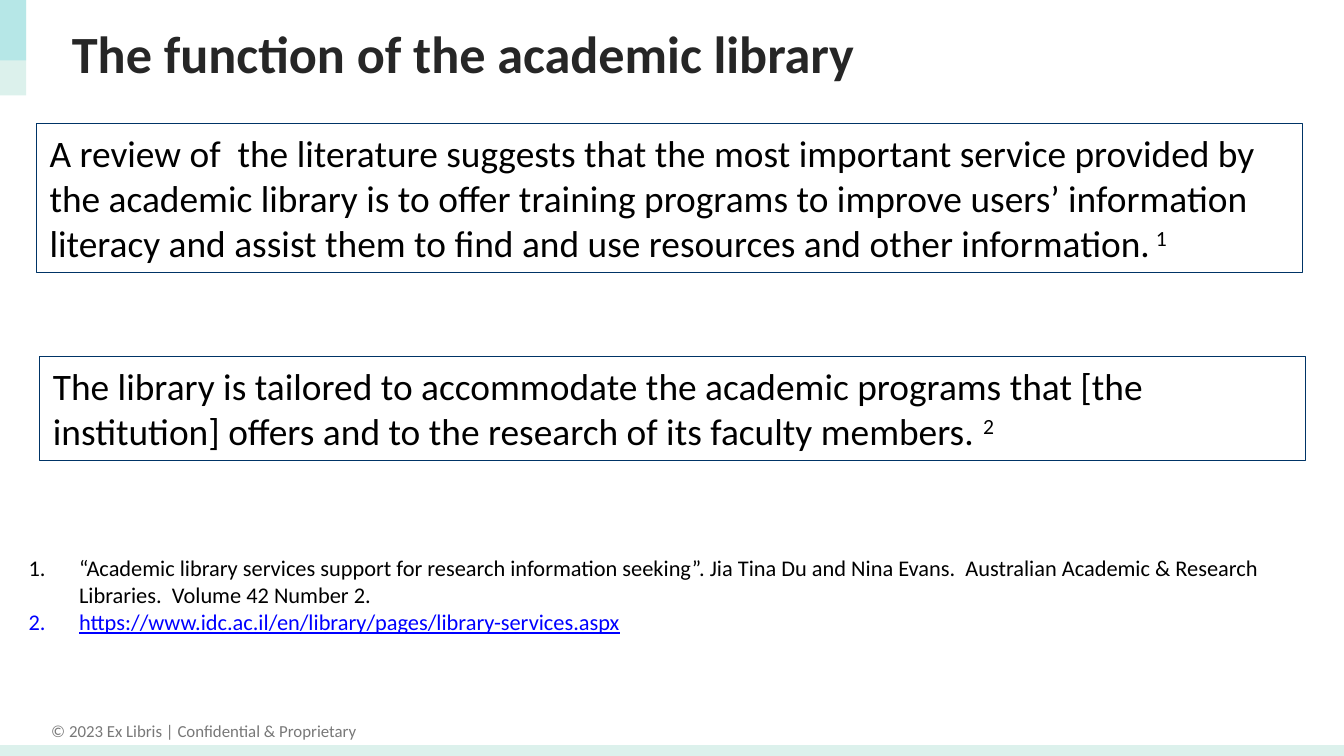
from lxml import etree
from pptx import Presentation
from pptx.dml.color import RGBColor
from pptx.enum.shapes import MSO_SHAPE
from pptx.enum.text import MSO_ANCHOR, MSO_AUTO_SIZE, PP_ALIGN
from pptx.oxml.ns import qn
from pptx.util import Pt

PX = 4572
FONT = "Calibri"
RECTANGLE = MSO_SHAPE.RECTANGLE
TOP, MIDDLE = MSO_ANCHOR.TOP, MSO_ANCHOR.MIDDLE
LEFT, CENTER = PP_ALIGN.LEFT, PP_ALIGN.CENTER
NO_FIT = MSO_AUTO_SIZE.NONE
TITLE_ONLY = 5
PAGE_WIDTH, PAGE_HEIGHT = 2000, 1125
INDENT = 75

BLACK, BLUE, NAVY = "000000", "0000FF", "003466"
MINT, TEAL = "DCF1EC", "50CFDA"

STATEMENTS = [
    ((54, 184, 1884, 222),
     "A review of  the literature suggests that the most important service "
     "provided by the academic library is to offer training programs to improve "
     "users’ information literacy and assist them to find and use resources and "
     "other information.", " 1"),
    ((59, 531, 1884, 154),
     "The library is tailored to accommodate the academic programs that [the "
     "institution] offers and to the research of its faculty members. ", "2"),
]
REFERENCES = [
    ("“Academic library services support for research information seeking”. "
     "Jia Tina Du and Nina Evans.  Australian Academic & Research Libraries.  "
     "Volume 42 Number 2.", BLACK, False),
    ("https://www.idc.ac.il/en/library/pages/library-services.aspx", BLUE, True),
]


def emu(*lengths):
    return [length * PX for length in lengths]


def color(value):
    return RGBColor.from_string(value)


def add_span(para, text, size, shade, bold=False, underline=False):
    span = para.add_run()
    span.text = text
    span.font.name = FONT
    span.font.size = Pt(size)
    span.font.bold = bold
    span.font.underline = underline
    span.font.color.rgb = color(shade)
    return span


def prepare_frame(shape, anchor=TOP, wrap=True):
    frame = shape.text_frame
    frame.word_wrap = wrap
    frame.auto_size = NO_FIT
    frame.vertical_anchor = anchor
    return frame


def add_rectangle(page, box, fill=None, line=None, opacity=None):
    shape = page.shapes.add_shape(RECTANGLE, *emu(*box))
    shape.shadow.inherit = False
    if fill:
        shape.fill.solid()
        shape.fill.fore_color.rgb = color(fill)
    else:
        shape.fill.background()
    if line:
        shape.line.color.rgb = color(line)
        shape.line.width = Pt(0.75)
    else:
        shape.line.fill.background()
    if opacity:
        tint = shape.fill._xPr.find(".//" + qn("a:srgbClr"))
        etree.SubElement(tint, qn("a:alpha"), val=str(opacity * 1000))
    return shape


def add_decoration(page, box):
    left, top, width, height = box
    add_rectangle(page, (left, top + height - 16, width, 16), MINT)
    add_rectangle(page, (left, top, 39, 142), MINT)
    add_rectangle(page, (left, top, 39, 90), TEAL, opacity=27)


def add_footer(page, box):
    shape = page.shapes.add_textbox(*emu(*box))
    para = prepare_frame(shape, wrap=False).paragraphs[0]
    para.alignment = CENTER
    add_span(para, "© 2023 Ex Libris | Confidential & Proprietary", 9, "787878")


def set_title(page, box):
    title = page.shapes.title
    title.left, title.top, title.width, title.height = emu(*box)
    para = prepare_frame(title, MIDDLE).paragraphs[0]
    para.alignment = LEFT
    add_span(para, "The function of the academic library", 28, "262626", bold=True)


def add_references(page, box):
    frame = prepare_frame(page.shapes.add_textbox(*emu(*box)))
    for index, (text, shade, underline) in enumerate(REFERENCES):
        para = frame.add_paragraph() if index else frame.paragraphs[0]
        properties = para._p.get_or_add_pPr()
        properties.set("marL", str(INDENT * PX))
        properties.set("indent", str(-INDENT * PX))
        etree.SubElement(properties, qn("a:buAutoNum"), type="arabicPeriod")
        add_span(para, text, 12, shade, underline=underline)


def add_statement(page, box, text, note):
    shape = add_rectangle(page, box, line=NAVY)
    para = prepare_frame(shape).paragraphs[0]
    para.alignment = LEFT
    add_span(para, text, 20, BLACK)
    mark = add_span(para, note, 20, BLACK)
    mark._r.get_or_add_rPr().set("baseline", "30000")


def main():
    deck = Presentation()
    deck.slide_width, deck.slide_height = emu(PAGE_WIDTH, PAGE_HEIGHT)
    page = deck.slides.add_slide(deck.slide_layouts[TITLE_ONLY])
    add_footer(page, (54, 1063, 498, 50))
    add_decoration(page, (0, 0, PAGE_WIDTH, PAGE_HEIGHT))
    set_title(page, (87, 16, 1842, 126))
    add_references(page, (23, 815, 1946, 142))
    for box, text, note in STATEMENTS:
        add_statement(page, box, text, note)
    deck.save("out.pptx")


if __name__ == "__main__":
    main()
